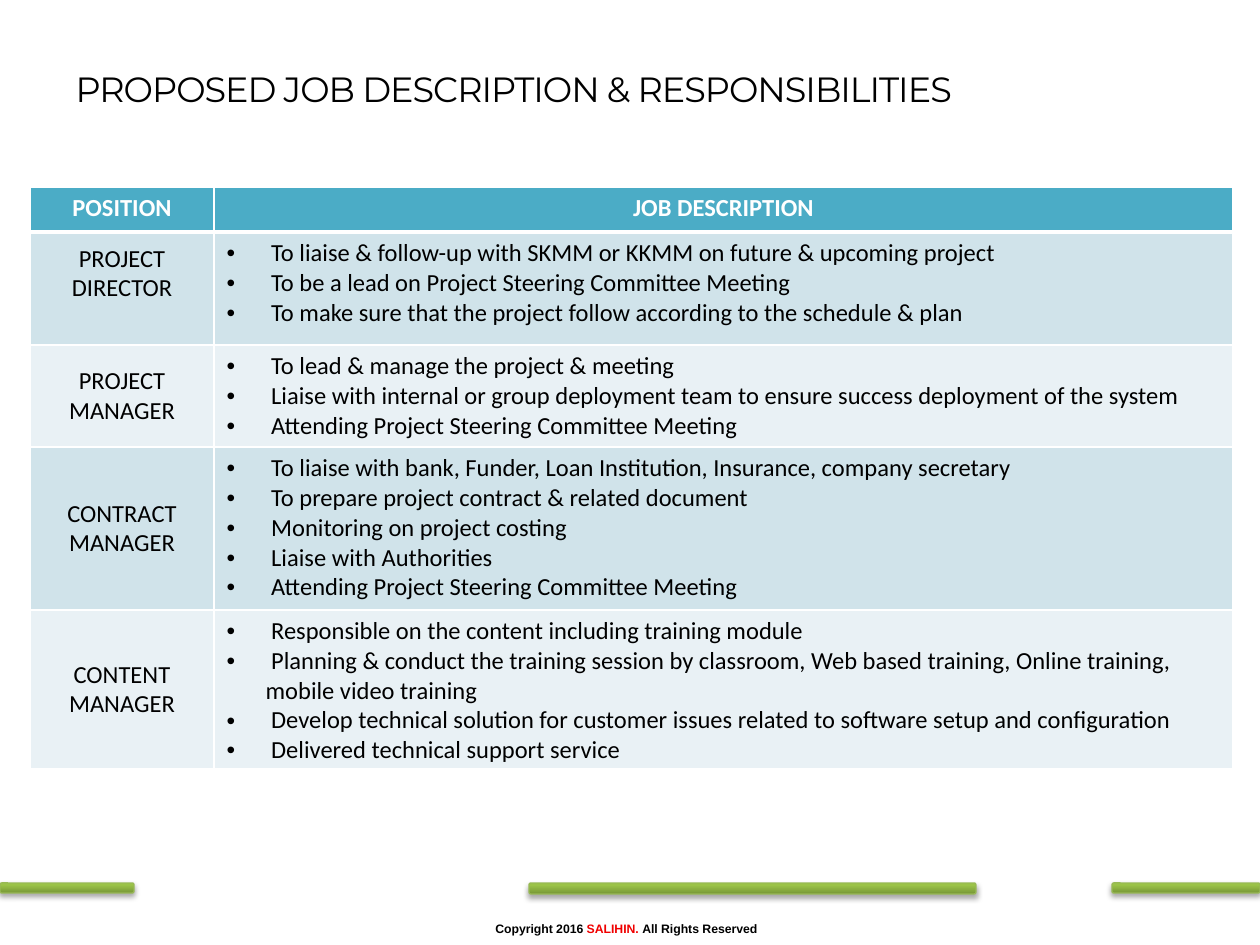
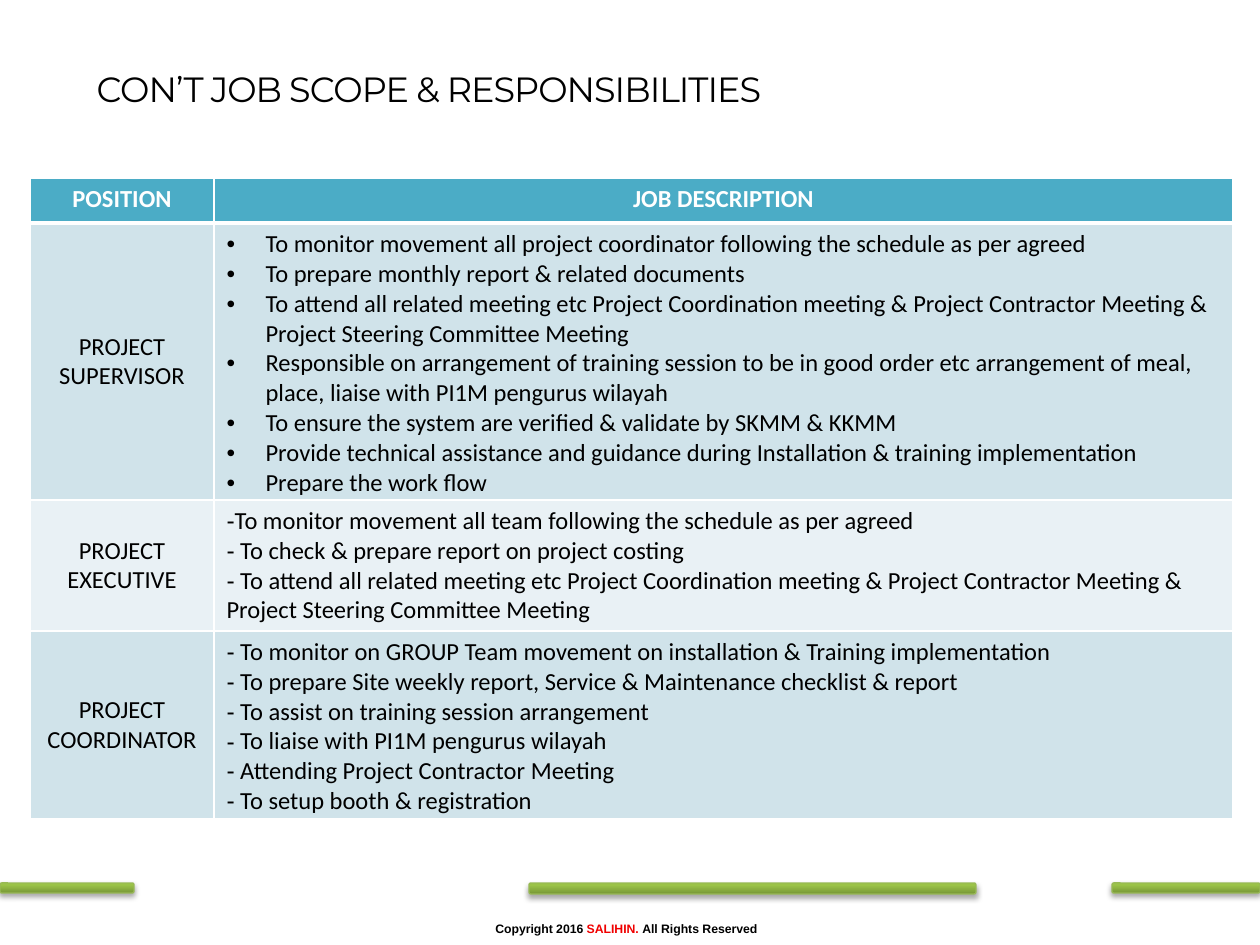
from copy import deepcopy
from dataclasses import dataclass

from lxml import etree
from pptx import Presentation
from pptx import util as u
from pptx.dml.color import RGBColor
from pptx.enum import shapes, text
from pptx.oxml import ns

EMU_PER_PX = 914400 / 126


@dataclass(frozen=True)
class Theme:
    black: str = "000000"
    white: str = "FFFFFF"
    red: str = "F00000"
    header: str = "4BACC6"
    bands: tuple = ("D0E3EA", "E9F1F5")
    bar_line: str = "98B955"
    bar_stops: tuple = ((0, "779737"), (0.8, "9BC348"), (1, "9DC746"))
    title_font: str = "Montserrat"
    body_font: str = "Calibri"
    footer_font: str = "Arial"
    title_size: int = 20
    body_size: int = 14
    footer_size: int = 7


THEME = Theme()

# Shared geometry in px
BARS = ((0, 883, 134, 10), (1112, 883, 148, 10), (529, 883, 447, 11))
COLUMNS = (184, 1019)
TABLE_LEFT = 30
HEADER_HEIGHT = 45
BULLET_INDENT = 39

# Rows: position, bullet sign, duties, height, bottom margin of the position
DIRECTORS_AND_MANAGERS = (
    ("PROJECT DIRECTOR", "•", (
        " To liaise & follow-up with SKMM or KKMM on future & upcoming project",
        " To be a lead on Project Steering Committee Meeting",
        " To make sure that the project follow according to the schedule & plan",
    ), 113, 36),
    ("PROJECT MANAGER", "•", (
        " To lead & manage the project & meeting",
        " Liaise with internal or group deployment team to ensure success deployment of the system",
        " Attending Project Steering Committee Meeting",
    ), 102, 6),
    ("CONTRACT MANAGER", "•", (
        " To liaise with bank, Funder, Loan Institution, Insurance, company secretary",
        " To prepare project contract & related document",
        " Monitoring on project costing",
        " Liaise with Authorities",
        " Attending Project Steering Committee Meeting",
    ), 163, 6),
    ("CONTENT MANAGER", "•", (
        " Responsible on the content including training module",
        " Planning & conduct the training session by classroom, Web based training, "
        "Online training, mobile video training",
        " Develop technical solution for customer issues related to software setup and configuration",
        " Delivered technical support service",
    ), 159, 6),
)
SUPERVISORS_AND_STAFF = (
    ("PROJECT SUPERVISOR", "•", (
        "To monitor movement all project coordinator following the schedule as per agreed",
        "To prepare monthly report & related documents",
        "To attend all related meeting etc Project Coordination meeting & "
        "Project Contractor Meeting & Project Steering Committee Meeting",
        "Responsible on arrangement of training session to be in good order etc "
        "arrangement of meal, place, liaise with PI1M pengurus wilayah",
        "To ensure the system are verified & validate by SKMM & KKMM",
        "Provide technical assistance and guidance during Installation & training implementation",
        "Prepare the work flow",
    ), 277, 6),
    ("PROJECT EXECUTIVE", "-", (
        "To monitor movement all team following the schedule as per agreed",
        " To check & prepare report on project costing",
        " To attend all related meeting etc Project Coordination meeting & "
        "Project Contractor Meeting & Project Steering Committee Meeting",
    ), 131, 6),
    ("PROJECT COORDINATOR", "-", (
        " To monitor on GROUP Team movement on installation & Training implementation",
        " To prepare Site weekly report, Service & Maintenance checklist & report",
        " To assist on training session arrangement",
        " To liaise with PI1M pengurus wilayah",
        " Attending Project Contractor Meeting",
        " To setup booth & registration",
    ), 188, 6),
)


def px(length):
    return u.Emu(round(length * EMU_PER_PX))


def box(*lengths):
    return [px(length) for length in lengths]


def child(parent, tag, **attributes):
    return etree.SubElement(parent, ns.qn(tag), attributes)


def write(paragraph, words, size=THEME.body_size, font=THEME.body_font,
          color=THEME.black, bold=False, align=None, spacing=None):
    """Add one formatted run to a paragraph."""
    run = paragraph.add_run()
    run.text = words
    run.font.size = u.Pt(size)
    run.font.name = font
    run.font.bold = bold
    run.font.color.rgb = RGBColor.from_string(color)
    if align is not None:
        paragraph.alignment = align
    if spacing is not None:
        run.font._element.set("spc", str(spacing))


# Title and footer
def add_title(slide, words, left):
    title = slide.shapes.title
    title.left, title.top, title.width, title.height = box(left, 0, 1176, 116)
    frame = title.text_frame
    frame.word_wrap = True
    frame.auto_size = text.MSO_AUTO_SIZE.NONE
    frame.vertical_anchor = text.MSO_ANCHOR.BOTTOM
    write(frame.paragraphs[0], words, size=THEME.title_size,
          font=THEME.title_font, align=text.PP_ALIGN.LEFT, spacing=-60)


def add_bar(slide, *bounds):
    bar = slide.shapes.add_shape(shapes.MSO_SHAPE.ROUNDED_RECTANGLE, *box(*bounds))
    bar.fill.gradient()
    bar.fill.gradient_angle = 90
    stop_list = bar.element.find(".//" + ns.qn("a:gsLst"))
    stop_list.append(deepcopy(stop_list[0]))
    for stop, (position, color) in zip(bar.fill.gradient_stops, THEME.bar_stops):
        stop.position = position
        stop.color.rgb = RGBColor.from_string(color)
    bar.line.color.rgb = RGBColor.from_string(THEME.bar_line)
    bar.line.width = u.Pt(0.75)
    bar.shadow.inherit = False
    effects = bar.element.spPr.find(ns.qn("a:effectLst"))
    shadow = child(effects, "a:outerShdw", blurRad=str(u.Pt(3.1)),
                   dist=str(u.Pt(1.8)), dir="5400000", rotWithShape="0")
    child(child(shadow, "a:srgbClr", val=THEME.black), "a:alpha", val="35000")


def add_footer(slide):
    for bounds in BARS:
        add_bar(slide, *bounds)
    frame = slide.shapes.add_textbox(*box(483, 915, 529, 28)).text_frame
    frame.word_wrap = True
    for words, color in (("Copyright 2016 ", THEME.black), ("SALIHIN. ", THEME.red),
                         ("All Rights Reserved", THEME.black)):
        write(frame.paragraphs[0], words, size=THEME.footer_size,
              font=THEME.footer_font, color=color, bold=True)


# Table
def style_cell(cell, fill, top=1, bottom=1):
    properties = cell._tc.get_or_add_tcPr()
    for side, width in (("L", 1), ("R", 1), ("T", top), ("B", bottom)):
        line = child(properties, f"a:ln{side}", w=str(u.Pt(width)))
        child(child(line, "a:solidFill"), "a:srgbClr", val=THEME.white)
    cell.fill.solid()
    cell.fill.fore_color.rgb = RGBColor.from_string(fill)


def set_bullet(paragraph, sign):
    indent = px(BULLET_INDENT) if sign == "•" else 0
    properties = paragraph._p.get_or_add_pPr()
    properties.set("marL", str(indent))
    properties.set("indent", str(-indent))
    child(properties, "a:buFont", typeface=THEME.footer_font)
    child(properties, "a:buChar", char=sign)


def fill_duties(cell, sign, duties):
    cell.margin_bottom = px(2)
    frame = cell.text_frame
    for index, duty in enumerate(duties):
        paragraph = frame.add_paragraph() if index else frame.paragraphs[0]
        set_bullet(paragraph, sign)
        write(paragraph, duty)


def add_job_table(slide, top, jobs):
    heights = [HEADER_HEIGHT] + [job[3] for job in jobs]
    table = slide.shapes.add_table(
        len(heights), len(COLUMNS),
        *box(TABLE_LEFT, top, sum(COLUMNS), sum(heights))).table
    for column, width in zip(table.columns, COLUMNS):
        column.width = px(width)
    for row, height in zip(table.rows, heights):
        row.height = px(height)

    for cell, heading in zip(table.rows[0].cells, ("POSITION", "JOB DESCRIPTION")):
        style_cell(cell, THEME.header, bottom=3)
        write(cell.text_frame.paragraphs[0], heading, color=THEME.white,
              bold=True, align=text.PP_ALIGN.CENTER)

    for index, (position, sign, duties, _, margin) in enumerate(jobs):
        position_cell, duties_cell = table.rows[index + 1].cells
        for cell in (position_cell, duties_cell):
            style_cell(cell, THEME.bands[index % 2], top=1 if index else 3)
        position_cell.vertical_anchor = text.MSO_ANCHOR.MIDDLE
        position_cell.margin_bottom = px(margin)
        write(position_cell.text_frame.paragraphs[0], position,
              align=text.PP_ALIGN.CENTER)
        fill_duties(duties_cell, sign, duties)


def add_job_slide(presentation, title, title_left, table_top, jobs):
    slide = presentation.slides.add_slide(presentation.slide_layouts[5])
    add_footer(slide)
    add_job_table(slide, table_top, jobs)
    add_title(slide, title, title_left)


def main():
    presentation = Presentation()
    presentation.slide_width, presentation.slide_height = box(1260, 945)
    add_job_slide(presentation, "PROPOSED JOB DESCRIPTION & RESPONSIBILITIES",
                  63, 187, DIRECTORS_AND_MANAGERS)
    add_job_slide(presentation, "CON’T JOB SCOPE & RESPONSIBILITIES",
                  84, 178, SUPERVISORS_AND_STAFF)
    presentation.save("out.pptx")


if __name__ == "__main__":
    main()
